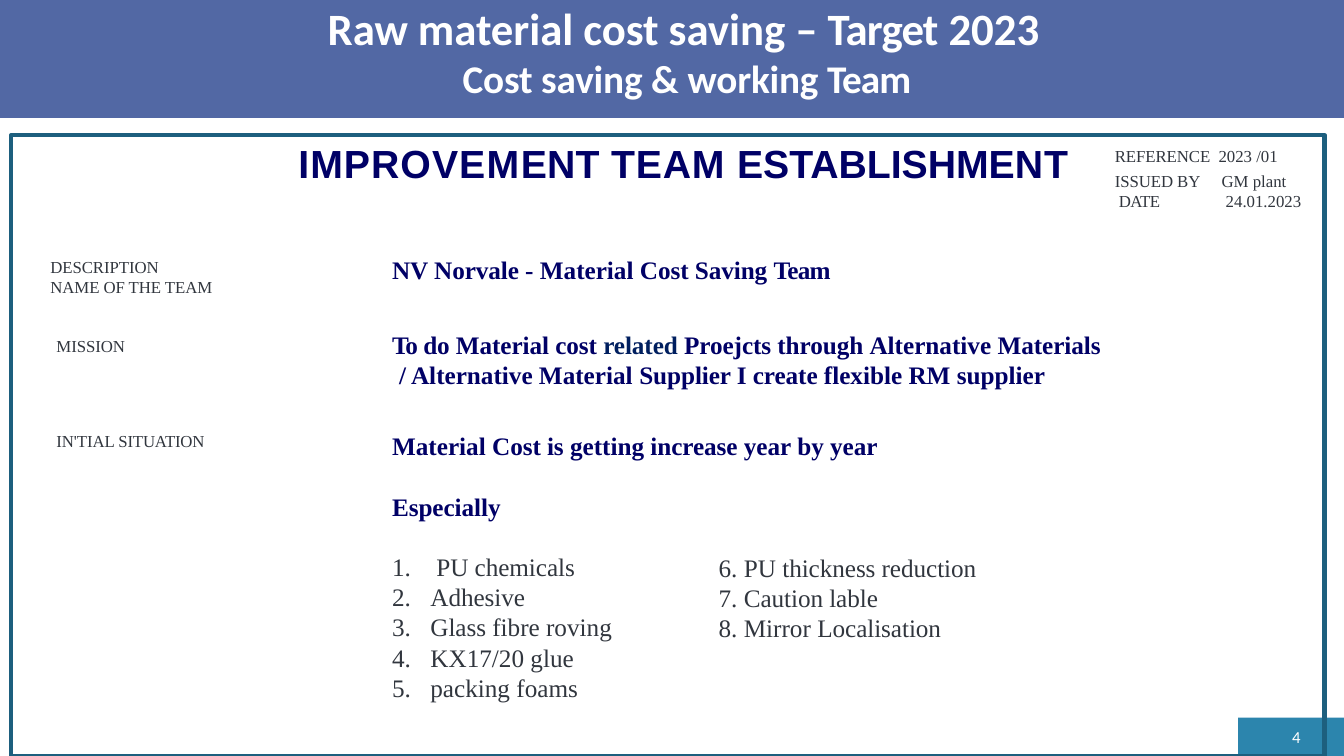
from lxml.etree import SubElement
from pptx import Presentation
from pptx.dml.color import RGBColor
from pptx.enum.shapes import MSO_SHAPE
from pptx.oxml.ns import qn
from pptx.util import Inches, Pt

COLORS = {"banner": "5268A4", "tab": "2C85AD", "frame": "1D5F7E", "white": "FFFFFF",
          "navy": "000066", "accent": "001F5F", "grey": "31363E"}
STYLES = {  # font, size, bold, colour
    "title": ("Calibri", 32, True, "white"),
    "subtitle": ("Calibri", 28, True, "white"),
    "heading": ("Arial", 28, True, "navy"),
    "label": ("Times New Roman", 12, False, "grey"),
    "answer": ("Times New Roman", 18, True, "navy"),
    "item": ("Times New Roman", 18, False, "grey"),
    "number": ("Calibri", 12, False, "white"),
}

deck = Presentation()
deck.slide_width, deck.slide_height = Inches(13.33), Inches(7.5)
page = deck.slides.add_slide(deck.slide_layouts[6])
COLUMN, ROW = deck.slide_width / 40, deck.slide_height / 30


def add_panel(left, top, width, height, fill=None, line=None):
    panel = page.shapes.add_shape(MSO_SHAPE.RECTANGLE, round(left * COLUMN), round(top * ROW),
                                  round(width * COLUMN), round(height * ROW))
    panel.shadow.inherit = False
    if fill:
        panel.fill.solid()
        panel.fill.fore_color.rgb = RGBColor.from_string(COLORS[fill])
    else:
        panel.fill.background()
    if line:
        panel.line.color.rgb = RGBColor.from_string(COLORS[line])
        panel.line.width = Pt(3)
    else:
        panel.line.fill.background()


def add_text(style, left, top, width, height, paragraphs, start=None):
    """Each paragraph is (indent in inches, spans); a span is (text, tracking in points[, colour]).
    With start, paragraphs are numbered from that value."""
    box = page.shapes.add_textbox(round(left * COLUMN), round(top * ROW),
                                  round(width * COLUMN), round(height * ROW))
    frame = box.text_frame
    frame.word_wrap = False
    frame.margin_left = frame.margin_right = frame.margin_bottom = 0
    frame.margin_top = Inches(0.01)
    name, size, bold, color = STYLES[style]
    for index, (indent, spans) in enumerate(paragraphs):
        para = frame.paragraphs[0] if index == 0 else frame.add_paragraph()
        para.space_before = Pt(0 if index else 1)
        para.font.name, para.font.size, para.font.bold = name, Pt(size), bold
        para.font.color.rgb = RGBColor.from_string(COLORS[color])
        properties = para._p.get_or_add_pPr()
        properties.set("marL", str(Inches(indent)))
        if start:
            properties.set("indent", str(Inches(0.01 - indent)))
            bullet = properties.makeelement(qn("a:buAutoNum"),
                                            {"type": "arabicPeriod", "startAt": str(start)})
            properties.find(qn("a:defRPr")).addprevious(bullet)
            tabs = properties.makeelement(qn("a:tabLst"), {})
            SubElement(tabs, qn("a:tab"), pos=str(Inches(indent)), algn="l")
            bullet.addnext(tabs)
        for text, tracking, *tint in spans:
            span = para.add_run()
            span.text = text
            span.font.name, span.font.size, span.font.bold = name, Pt(size), bold
            span.font.color.rgb = RGBColor.from_string(COLORS[tint[0] if tint else color])
            span._r.get_or_add_rPr().set("spc", str(round(tracking * 100)))


add_panel(36.85, 28.48, 3.15, 1.52, fill="tab")
add_panel(0, 0, 40, 4.68, fill="banner")

LABELS, ANSWERS, REFERENCE = 1.65, 11.64, 33.15
TIGHT = -0.05

# Headings
add_text("title", 9.72, 0, 21.42, 2.24, [
    (0.01, [("Raw material cost saving – ", TIGHT), ("Target", -0.6), (" 2023", TIGHT)])])
add_text("subtitle", 13.74, 2.12, 13.62, 2, [
    (0.01, [("Cost saving ", -0.1), ("& ", 0), ("working ", -0.1), ("Team", -0.7)])])
add_text("heading", 8.85, 5.48, 23, 2, [
    (0.01, [("IMPROVE", 0.8), ("M", 1.1), ("ENT ", 0.2), ("TEAM ", 0.6),
            ("ESTABLISHME", 0), ("NT", 0.8)])])

# Reference block
add_text("label", REFERENCE, 5.75, 4.95, 0.92, [
    (0.01, [("REFERENCE  ", TIGHT), ("2023 /01", 0)])])
add_text("label", REFERENCE, 6.72, 2.64, 1.72, [
    (0.01, [("ISSUED BY", TIGHT)]), (0.05, [("DATE", -0.4)])])
add_text("label", 36.33, 6.72, 2.43, 1.72, [
    (0.01, [("GM ", TIGHT), ("plant", 0)]), (0.05, [("24.01.2023", 0)])])

# Left-hand labels
add_text("label", 1.47, 10.15, 4.92, 1.72, [
    (0.01, [("DESCRIPTION", TIGHT)]), (0.01, [("NAME OF THE TEAM", TIGHT)])])
add_text("label", LABELS, 13.27, 2.13, 0.92, [(0.01, [("MISSION", TIGHT)])])
add_text("label", LABELS, 17.07, 4.56, 0.92, [
    (0.01, [("IN'TIAL ", TIGHT), ("SITUATION", -0.15)])])

# Answers
add_text("answer", ANSWERS, 10.04, 13.41, 1.32, [
    (0.01, [("NV Norvale ", TIGHT), ("- Material", 0), (" Cost Saving ", TIGHT),
            ("Team", -0.5)])])
add_text("answer", ANSWERS, 13.03, 21.3, 2.52, [
    (0.01, [("To ", -0.8), ("do Material cost ", TIGHT), ("related ", TIGHT, "accent"),
            ("Proejcts through ", TIGHT), ("Alternative ", 0), ("Materials", TIGHT)]),
    (0.08, [("/ Alternative Material ", 0), ("Supplier I create ", TIGHT), ("flexible ", 0),
            ("RM ", TIGHT), ("supplier", 0)])])
add_text("answer", ANSWERS, 17.03, 14.58, 1.32, [
    (0.01, [("Material ", 0), ("Cost is ", TIGHT), ("getting", 0), (" increase ", TIGHT),
            ("year ", 0), ("by ", TIGHT), ("year", 0)])])
add_text("answer", ANSWERS, 19.44, 3.33, 1.32, [(0.01, [("Especially", TIGHT)])])

# Numbered savings
add_text("item", ANSWERS, 21.84, 6.63, 6.12, [
    (0.45, [("PU chemicals", TIGHT)]),
    (0.39, [("Adhesive", TIGHT)]),
    (0.39, [("Glass ", TIGHT), ("fibre roving", 0)]),
    (0.39, [("KX17/20 glue", 0)]),
    (0.39, [("packing foams", 0)])], start=1)
add_text("item", 21.36, 21.87, 7.8, 3.72, [
    (0.26, [("PU ", 0), ("thickness reduction", TIGHT)]),
    (0.26, [("Caution lable", TIGHT)]),
    (0.26, [("Mirror ", 0), ("Localisation", TIGHT)])], start=6)

add_panel(0.33, 5.36, 39.09, 24.64, line="frame")
add_text("number", 38.34, 28.8, 0.51, 0.76, [(0.04, [("4", 0)])])

deck.save("out.pptx")
